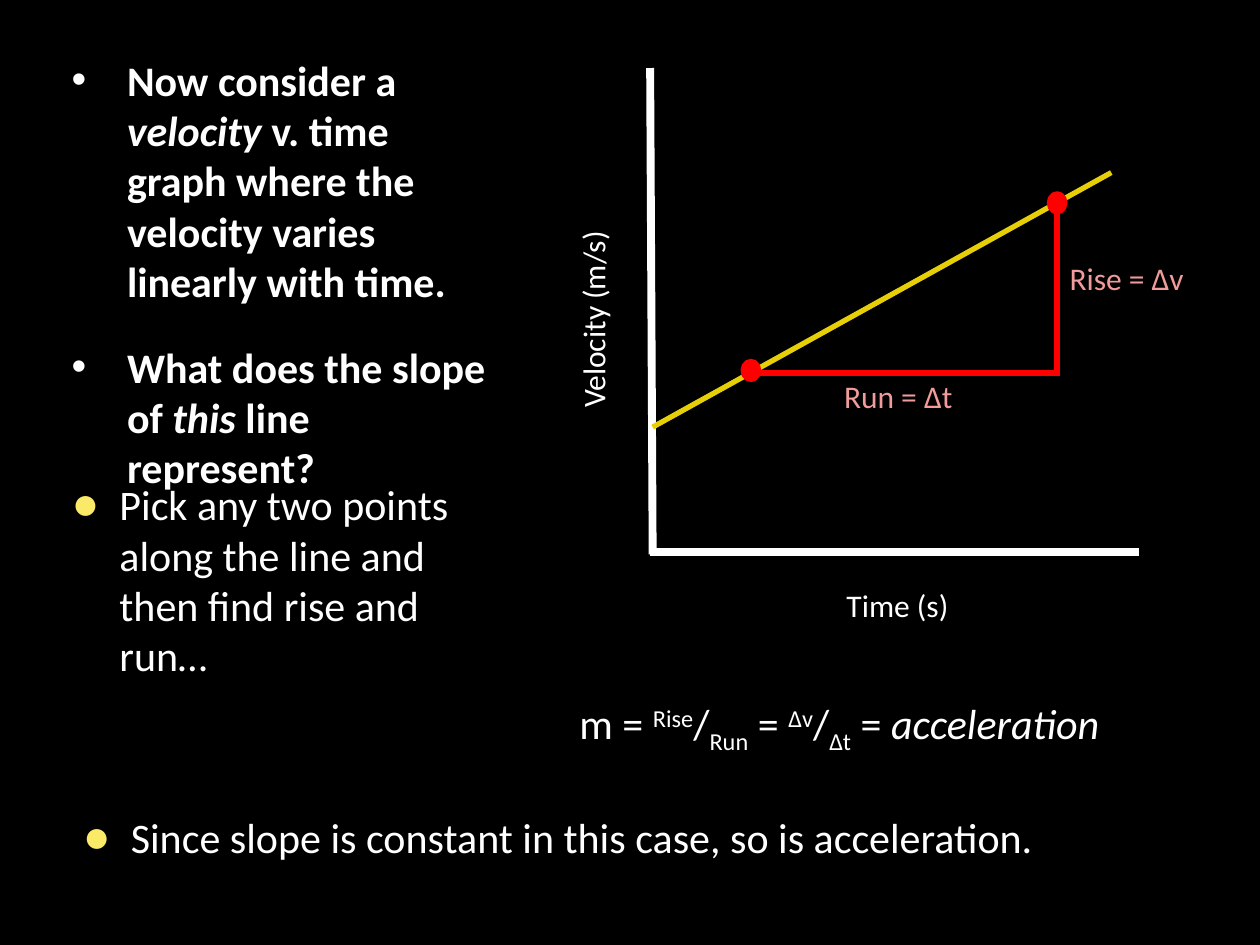
import pptx
import pptx.dml.color
import pptx.enum.shapes
import pptx.enum.text
import pptx.oxml.ns
import pptx.util
from lxml import etree
from pptx.util import Inches

COLORS = {
    "background": "000000",
    "text": "FFFFFF",
    "bullet": "FAEA68",
    "slope": "E7CF08",
    "triangle": "FF0000",
    "label": "F19B9B",
}
FONT = "Calibri"
SUPER, SUB = 30, -25


def rgb(name):
    """Return the named colour."""
    return pptx.dml.color.RGBColor.from_string(COLORS[name])


def add_element(parent, tag, **attributes):
    """Append a DrawingML element to its parent."""
    return etree.SubElement(parent, pptx.oxml.ns.qn(tag), attributes)


def add_bullet(paragraph, character, indent, color=None):
    """Give a paragraph a hanging bullet, enlarged when it is coloured."""
    properties = paragraph._p.get_or_add_pPr()
    properties.set("marL", str(Inches(indent)))
    properties.set("indent", str(-Inches(indent)))
    if color:
        fill = add_element(properties, "a:buClr")
        add_element(fill, "a:srgbClr", val=COLORS[color])
        add_element(properties, "a:buSzPct", val="110000")
    add_element(properties, "a:buFont", typeface="Arial")
    add_element(properties, "a:buChar", char=character)


def add_text(slide, box, paragraphs, size=24, color="text", bold=False,
             wrap=True, grow=False, rotation=0, bullet=None):
    """Add a text box; a paragraph is a list of (text, italic, baseline) runs."""
    shape = slide.shapes.add_textbox(*map(Inches, box))
    shape.rotation = rotation
    frame = shape.text_frame
    frame.word_wrap = wrap
    if grow:
        frame.auto_size = pptx.enum.text.MSO_AUTO_SIZE.SHAPE_TO_FIT_TEXT
    for index, runs in enumerate(paragraphs):
        paragraph = frame.add_paragraph() if index else frame.paragraphs[0]
        if index:
            paragraph.space_before = pptx.util.Pt(20)
        if bullet:
            add_bullet(paragraph, **bullet)
        for text, italic, baseline in runs:
            run = paragraph.add_run()
            run.text = text
            run.font.name = FONT
            run.font.size = pptx.util.Pt(size)
            run.font.bold = bold
            run.font.italic = italic
            run.font.color.rgb = rgb(color)
            if baseline:
                run._r.get_or_add_rPr().set("baseline", str(baseline * 1000))


def add_line(slide, start, end, color, width):
    """Draw a straight line between two points."""
    line = slide.shapes.add_connector(
        pptx.enum.shapes.MSO_CONNECTOR.STRAIGHT, *map(Inches, (*start, *end)))
    line.line.color.rgb = rgb(color)
    line.line.width = pptx.util.Pt(width)
    add_element(line._element.spPr, "a:effectLst")


def add_point(slide, center):
    """Mark a chosen point on the velocity line."""
    width, height = 0.13, 0.15
    shape = slide.shapes.add_shape(
        pptx.enum.shapes.MSO_SHAPE.OVAL,
        *map(Inches, (center[0] - width / 2, center[1] - height / 2, width, height)))
    shape.shadow.inherit = False
    shape.fill.solid()
    shape.fill.fore_color.rgb = rgb("triangle")
    shape.line.color.rgb = rgb("triangle")
    shape.line.width = pptx.util.Pt(2.5)


def add_graph(slide, left, top):
    """Draw the velocity graph with its rise and run triangle."""
    def at(x, y):
        return left + x, top + y

    lines = [
        (at(0, 0), at(0.02, 3.86), "text", 4.5),
        (at(3.88, 3.84), at(0, 3.84), "text", 4.5),
        (at(0.02, 2.85), at(3.66, 0.83), "slope", 3),
        (at(0.81, 2.42), at(3.25, 2.42), "triangle", 3),
        (at(3.23, 1.05), at(3.23, 2.42), "triangle", 3),
    ]
    for line in lines:
        add_line(slide, *line)
    for center in (at(3.23, 1.07), at(0.8, 2.4)):
        add_point(slide, center)
    labels = [
        ("Velocity (m/s)", at(-1.28, 1.77), 1.65, "text", 270),
        ("Time (s)", at(1.46, 4.06), 1.06, "text", 0),
        ("Run = Δt", at(1.44, 2.4), 1.09, "label", 0),
        ("Rise = Δv", at(3.23, 1.47), 1.14, "label", 0),
    ]
    for text, corner, width, color, rotation in labels:
        add_text(slide, (*corner, width, 0.4), [[(text, False, 0)]], size=18,
                 color=color, wrap=False, grow=True, rotation=rotation)


def add_questions(slide, box):
    """Place the bold introduction and question."""
    paragraphs = [
        [("Now consider a ", False, 0), ("velocity", True, 0),
         (" v. time graph where the velocity varies linearly with time.", False, 0)],
        [("What does the slope of ", False, 0), ("this", True, 0),
         (" line represent?", False, 0)],
    ]
    add_text(slide, box, paragraphs, bold=True,
             bullet={"character": "•", "indent": 0.44})


def add_step(slide, box, text):
    """Place one step of the answer with a yellow bullet."""
    add_text(slide, box, [[(text, False, 0)]],
             bullet={"character": "●", "indent": 0.38, "color": "bullet"})


def add_formula(slide, box):
    """Place the slope formula."""
    runs = [("m = ", False, 0)]
    for numerator, denominator in (("Rise", "Run"), ("Δv", "Δt")):
        runs += [(numerator, False, SUPER), ("/", False, 0),
                 (denominator, False, SUB), (" = ", False, 0)]
    add_text(slide, box, [runs + [("acceleration", True, 0)]], grow=True)


def main():
    """Build the slide and save it."""
    presentation = pptx.Presentation()
    presentation.slide_width = Inches(10)
    presentation.slide_height = Inches(7.5)
    slide = presentation.slides.add_slide(presentation.slide_layouts[6])
    slide.background.fill.solid()
    slide.background.fill.fore_color.rgb = rgb("background")
    add_questions(slide, (0.47, 0.38, 3.54, 3.42))
    add_graph(slide, 5.16, 0.54)
    add_step(slide, (0.47, 3.75, 3.54, 3.42),
             "Pick any two points along the line and then find rise and run…")
    add_step(slide, (0.56, 6.39, 9.25, 0.78),
             "Since slope is constant in this case, so is acceleration.")
    add_formula(slide, (4.5, 5.49, 4.75, 0.5))
    presentation.save("out.pptx")


if __name__ == "__main__":
    main()
